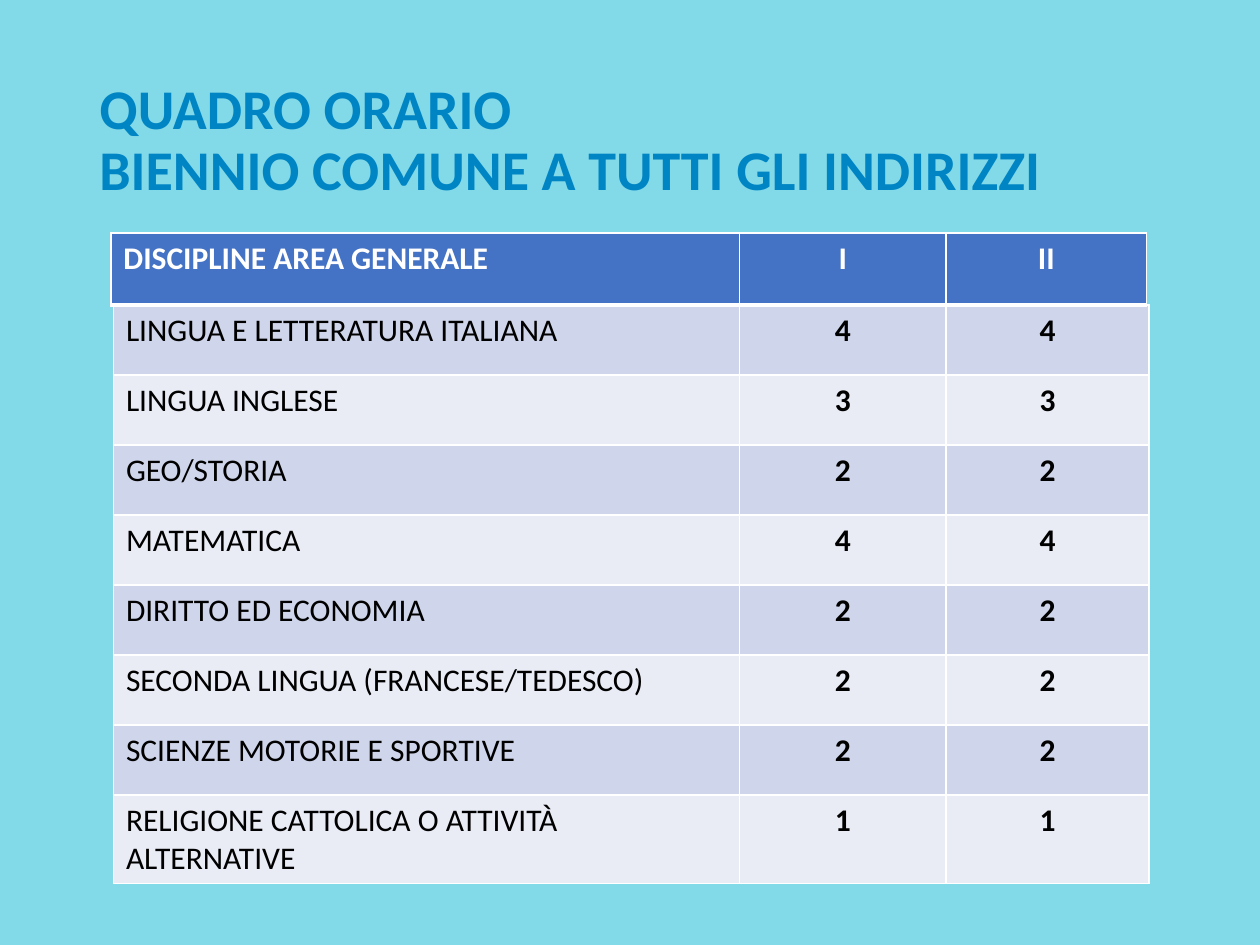
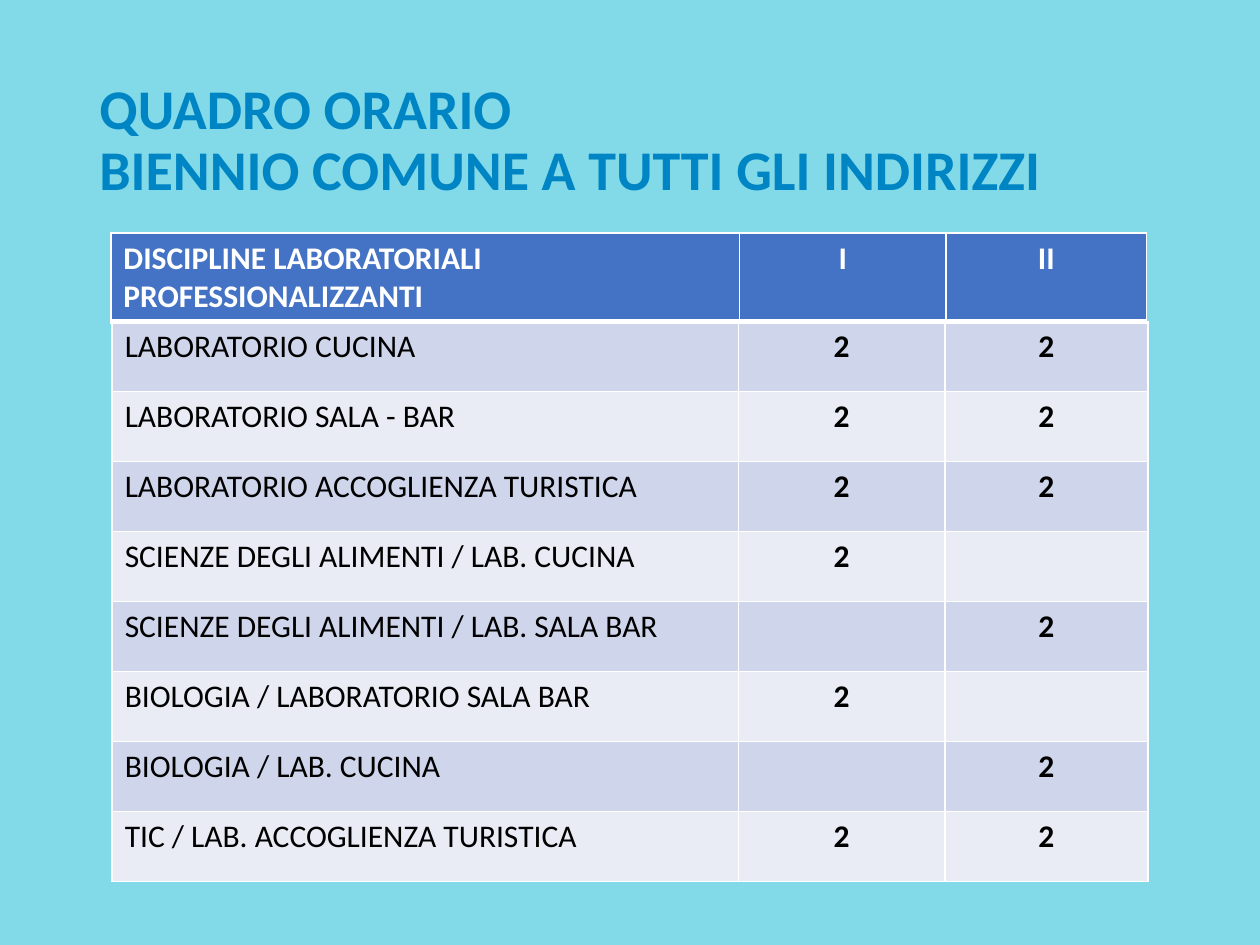
from pptx import Presentation
from pptx.dml.color import RGBColor as RGB
from pptx.enum.text import MSO_ANCHOR as Anchor, PP_ALIGN as Align
from pptx.oxml import parse_xml
from pptx.oxml.ns import nsdecls
from pptx.util import Inches, Pt

# Shared look
SKY = RGB(0x82, 0xD9, 0xE8)
BLUE = RGB(0x00, 0x85, 0xC4)
HEAD = RGB(0x44, 0x72, 0xC4)
BANDS = (RGB(0xCF, 0xD5, 0xEA), RGB(0xE9, 0xEB, 0xF5))
WHITE = RGB(0xFF, 0xFF, 0xFF)
BLACK = RGB(0x00, 0x00, 0x00)
FACE = "Calibri"
TITLE = "QUADRO ORARIO \vBIENNIO COMUNE A TUTTI GLI INDIRIZZI"
ROW = 4.45 / 8
TOP = 1.85
HEAD_COLS = (4.99, 1.64, 1.59)
BODY_COLS = (4.97, 1.64, 1.61)

# Subject, hours in year I, hours in year II
GENERAL = [
    ("LINGUA E LETTERATURA ITALIANA", "4", "4"),
    ("LINGUA INGLESE", "3", "3"),
    ("GEO/STORIA", "2", "2"),
    ("MATEMATICA", "4", "4"),
    ("DIRITTO ED ECONOMIA", "2", "2"),
    ("SECONDA LINGUA (FRANCESE/TEDESCO)", "2", "2"),
    ("SCIENZE MOTORIE E SPORTIVE", "2", "2"),
    ("RELIGIONE CATTOLICA O ATTIVITÀ ALTERNATIVE", "1", "1"),
]
LABS = [
    ("LABORATORIO CUCINA", "2", "2"),
    ("LABORATORIO SALA - BAR", "2", "2"),
    ("LABORATORIO ACCOGLIENZA TURISTICA", "2", "2"),
    ("SCIENZE DEGLI ALIMENTI / LAB. CUCINA", "2", ""),
    ("SCIENZE DEGLI ALIMENTI / LAB. SALA BAR", "", "2"),
    ("BIOLOGIA / LABORATORIO SALA BAR", "2", ""),
    ("BIOLOGIA / LAB. CUCINA", "", "2"),
    ("TIC / LAB. ACCOGLIENZA TURISTICA", "2", "2"),
]


def style(para, color, **extra):
    form = {"name": FACE, "size": Pt(18), "bold": True, **extra}
    for key, value in form.items():
        setattr(para.font, key, value)
    para.font.color.rgb = color


def add_title(slide):
    box = slide.shapes.add_textbox(
        Inches(0.69), Inches(0.4), Inches(8.62), Inches(1.45))
    frame = box.text_frame
    for key, value in {"word_wrap": True,
                       "vertical_anchor": Anchor.MIDDLE}.items():
        setattr(frame, key, value)
    para = frame.paragraphs[0]
    para.text = TITLE
    para.line_spacing = 0.9
    style(para, BLUE, size=Pt(32))


def add_edges(cell, base):
    props = cell._tc.get_or_add_tcPr()
    for side, width in {"L": 1, "R": 1, "T": 1, "B": base}.items():
        props.append(parse_xml(
            f'<a:ln{side} {nsdecls("a")} w="{Pt(width)}"><a:solidFill>'
            f'<a:srgbClr val="{WHITE}"/></a:solidFill></a:ln{side}>'))


def fill_cell(cell, text, fill, color, bold, align, base):
    add_edges(cell, base)
    cell.fill.solid()
    cell.fill.fore_color.rgb = fill
    para = cell.text_frame.paragraphs[0]
    para.text = text
    para.alignment = align
    style(para, color, bold=bold)


def add_grid(slide, left, top, cols, rows, high, head=False):
    table = slide.shapes.add_table(
        len(rows), len(cols), Inches(left), Inches(top),
        Inches(sum(cols)), Inches(high * len(rows))).table
    for key in ("first_row", "horz_banding"):
        setattr(table, key, False)
    for col, width in zip(table.columns, cols):
        col.width = Inches(width)
    for i, row in enumerate(rows):
        table.rows[i].height = Inches(high)
        for j, text in enumerate(row):
            fill_cell(table.cell(i, j), text,
                      fill=HEAD if head else BANDS[i % 2],
                      color=WHITE if head else BLACK,
                      bold=head or j > 0,
                      align=Align.CENTER if j else Align.LEFT,
                      base=3 if head else 1)


def add_plan(deck, area, rows, left, high):
    slide = deck.slides.add_slide(deck.slide_layouts[6])
    back = slide.background.fill
    back.solid()
    back.fore_color.rgb = SKY
    add_title(slide)
    # Subjects first, so the thick header edge lies on top
    add_grid(slide, left, TOP + high, BODY_COLS, rows, ROW)
    add_grid(slide, 0.88, TOP, HEAD_COLS, [(area, "I", "II")], high, head=True)


def main():
    deck = Presentation()
    deck.slide_width, deck.slide_height = Inches(10), Inches(7.5)
    add_plan(deck, "DISCIPLINE AREA GENERALE", GENERAL, 0.9, 0.57)
    add_plan(deck, "DISCIPLINE LABORATORIALI PROFESSIONALIZZANTI",
             LABS, 0.89, 0.7)
    deck.save("out.pptx")


if __name__ == "__main__":
    main()
